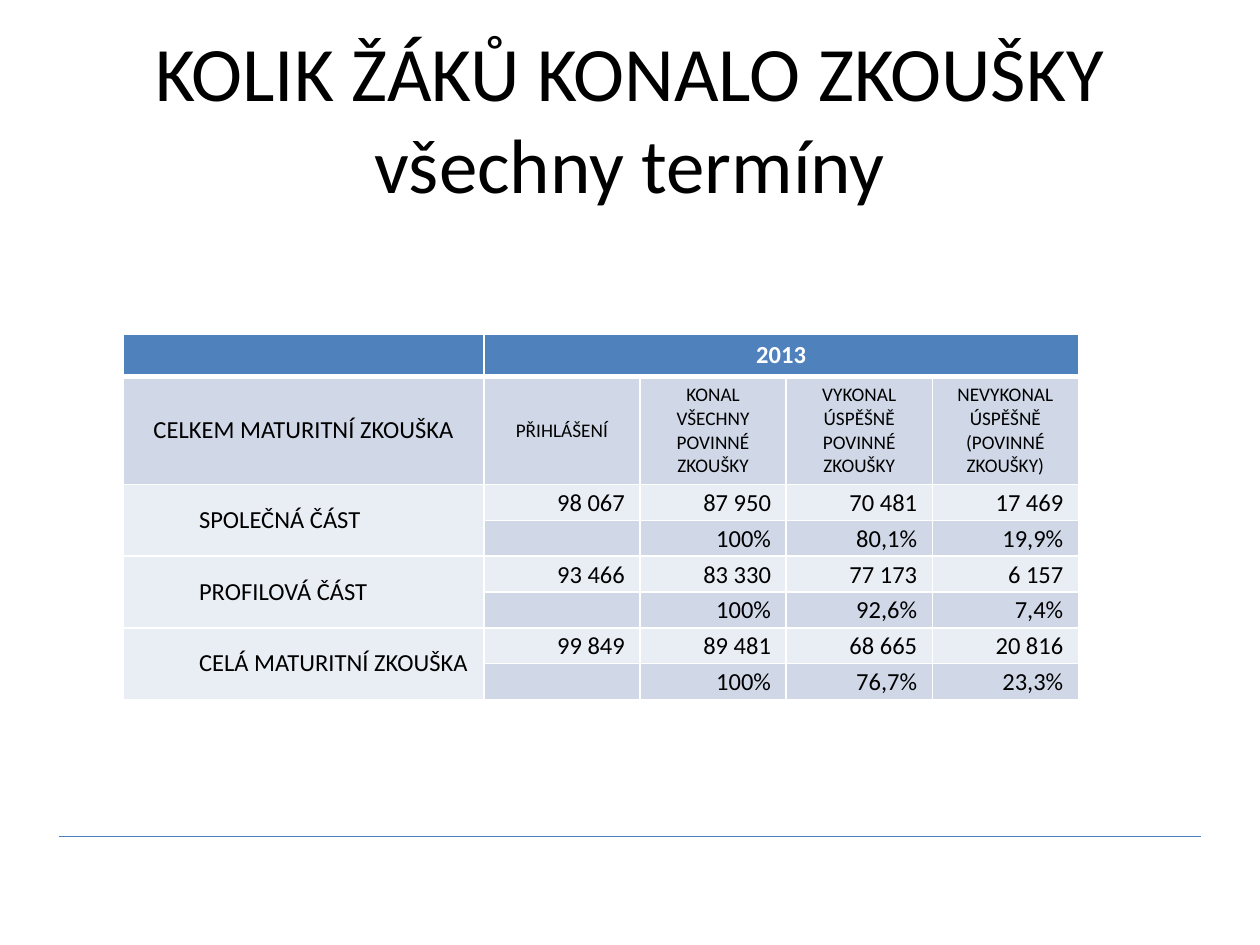
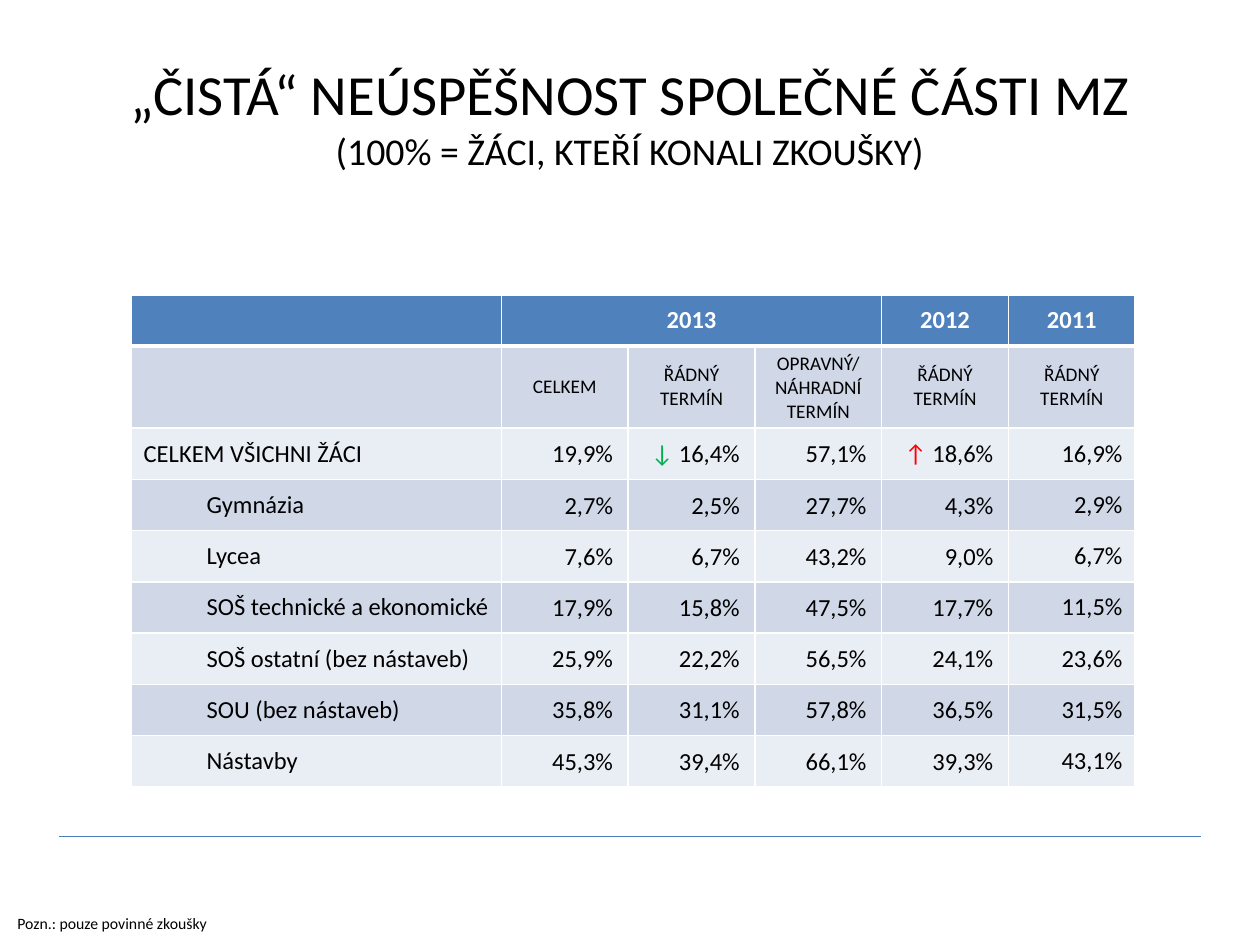
from dataclasses import dataclass

from lxml import etree
from pptx import Presentation
from pptx.dml.color import RGBColor
from pptx.enum.shapes import MSO_CONNECTOR
from pptx.enum.text import MSO_ANCHOR, MSO_AUTO_SIZE, PP_ALIGN
from pptx.oxml.ns import qn
from pptx.util import Inches, Pt

LEFT, CENTER, RIGHT = PP_ALIGN.LEFT, PP_ALIGN.CENTER, PP_ALIGN.RIGHT
MIDDLE = MSO_ANCHOR.MIDDLE
NO_AUTOFIT = MSO_AUTO_SIZE.NONE
STRAIGHT = MSO_CONNECTOR.STRAIGHT

FONT = "Calibri"
COLORS = {
    "text": "000000",
    "white": "FFFFFF",
    "rule": "4B7EBC",
    "header": "4F81BD",
    "dark band": "D0D8E8",
    "light band": "E9EDF4",
    "↓": "00B050",
    "↑": "FF0000",
}

# The slide is a grid of 100 columns by 75 rows of square cells
SLIDE_WIDTH, SLIDE_HEIGHT = Inches(10), Inches(7.5)
GRID_CELL = SLIDE_WIDTH // 100
TITLE_ONLY = 5
NUMBER_MARGINS = (0.1, 0.1, 1.2, 0)
LABEL_INDENT = 5


@dataclass
class Box:
    left: float
    top: float
    width: float
    height: float


@dataclass
class TitleLine:
    text: str
    size: float


@dataclass
class Row:
    label: str
    values: list[str]
    indented: bool = True


@dataclass
class ResultTable:
    left: float
    top: float
    column_widths: list[float]
    row_heights: list[float]
    rows: list[Row]
    merges: list[tuple[int, int, int, int]]
    narrow_margin_columns: int = 4


@dataclass
class CellStyle:
    size: float
    align: PP_ALIGN
    color: str = "text"
    bold: bool = False
    indent: float = 0


def grid(cells: float) -> int:
    return round(cells * GRID_CELL)


def rgb(name: str) -> RGBColor:
    return RGBColor.from_string(COLORS[name])


def set_font(font, size: float, color: str = "text", bold: bool = False) -> None:
    font.name, font.size, font.bold = FONT, Pt(size), bold
    font.color.rgb = rgb(color)


def place(shape, box: Box) -> None:
    shape.left, shape.top = grid(box.left), grid(box.top)
    shape.width, shape.height = grid(box.width), grid(box.height)


# Shared parts: title and bottom rule
def add_titled_slide(presentation, box: Box, lines: list[TitleLine]):
    slide = presentation.slides.add_slide(presentation.slide_layouts[TITLE_ONLY])
    title = slide.shapes.title
    place(title, box)
    frame = title.text_frame
    frame.auto_size, frame.vertical_anchor = NO_AUTOFIT, MIDDLE
    paragraph = frame.paragraphs[0]
    paragraph.alignment = CENTER
    set_font(paragraph.font, lines[0].size)
    for index, line in enumerate(lines):
        if index:
            paragraph.add_line_break()
        run = paragraph.add_run()
        run.text = line.text
        run.font.size = Pt(line.size)

    rule = slide.shapes.add_connector(
        STRAIGHT, grid(4.7), grid(66.4), grid(95.3), grid(66.4))
    rule.line.color.rgb, rule.line.width = rgb("rule"), Pt(0.75)
    etree.SubElement(rule._element.spPr, qn("a:effectLst"))
    return slide


# Table cells
def set_borders(cell, row: int) -> None:
    properties = cell._tc.get_or_add_tcPr()
    thick_sides = {0: "B", 1: "T"}
    for side in "LRTB":
        width = Pt(3 if thick_sides.get(row) == side else 1)
        line = etree.SubElement(properties, qn(f"a:ln{side}"), w=str(width))
        fill = etree.SubElement(line, qn("a:solidFill"))
        etree.SubElement(fill, qn("a:srgbClr"), val=COLORS["white"])


def write_cell(cell, text: str, style: CellStyle) -> None:
    cell.vertical_anchor = MIDDLE
    frame = cell.text_frame
    for index, part in enumerate(text.split("\n")):
        paragraph = frame.add_paragraph() if index else frame.paragraphs[0]
        paragraph.alignment = style.align
        set_font(paragraph.font, style.size, style.color, style.bold)
        if style.indent:
            paragraph._p.get_or_add_pPr().set("marL", str(grid(style.indent)))
        if not part:
            # An empty cell must not force its row taller
            paragraph._p.get_or_add_endParaRPr().set("sz", str(style.size * 100))
        elif part[0] in COLORS:
            for piece, color in ((part[:2], part[0]), (part[2:], "text")):
                run = paragraph.add_run()
                run.text = piece
                run.font.color.rgb = rgb(color)
        else:
            paragraph.add_run().text = part


def cell_style(row: int, column: int, indented: bool) -> CellStyle:
    if row == 0:
        return CellStyle(14, CENTER, "white", True)
    if row == 1:
        return CellStyle(11 if column else 14, CENTER)
    if column:
        return CellStyle(14, RIGHT)
    return CellStyle(14, LEFT, indent=LABEL_INDENT if indented else 0)


def add_result_table(slide, spec: ResultTable) -> None:
    table = slide.shapes.add_table(
        len(spec.rows), len(spec.column_widths), grid(spec.left), grid(spec.top),
        grid(sum(spec.column_widths)), grid(sum(spec.row_heights))).table
    for column, width in zip(table.columns, spec.column_widths):
        column.width = grid(width)
    for row, height in zip(table.rows, spec.row_heights):
        row.height = grid(height)

    for row_index, row in enumerate(spec.rows):
        band = "dark band" if row_index % 2 else "light band"
        for column_index, text in enumerate([row.label, *row.values]):
            cell = table.cell(row_index, column_index)
            set_borders(cell, row_index)
            cell.fill.solid()
            cell.fill.fore_color.rgb = rgb(band if row_index else "header")
            if row_index > 1 and 1 <= column_index <= spec.narrow_margin_columns:
                (cell.margin_left, cell.margin_top, cell.margin_right,
                 cell.margin_bottom) = map(grid, NUMBER_MARGINS)
            write_cell(cell, text, cell_style(row_index, column_index, row.indented))

    for top, left, bottom, right in spec.merges:
        table.cell(top, left).merge(table.cell(bottom, right))


def add_note(slide, text: str, box: Box) -> None:
    note = slide.shapes.add_textbox(0, 0, 0, 0)
    place(note, box)
    note.text_frame.word_wrap = True
    paragraph = note.text_frame.paragraphs[0]
    paragraph.text = text
    set_font(paragraph.font, 9)


# Slide contents
EXAM_COUNTS = ResultTable(
    9.8, 26.5, [28.6, 12.4] + [11.6] * 3, [3.3, 8.6] + [2.84] * 6,
    [
        Row("", ["2013", "", "", ""]),
        Row("CELKEM MATURITNÍ ZKOUŠKA", [
            "PŘIHLÁŠENÍ", "KONAL VŠECHNY POVINNÉ ZKOUŠKY",
            "VYKONAL ÚSPĚŠNĚ\nPOVINNÉ ZKOUŠKY",
            "NEVYKONAL ÚSPĚŠNĚ\n(POVINNÉ ZKOUŠKY)"]),
        Row("SPOLEČNÁ ČÁST", ["98 067", "87 950", "70 481", "17 469"]),
        Row("", ["", "100%", "80,1%", "19,9%"]),
        Row("PROFILOVÁ ČÁST", ["93 466", "83 330", "77 173", "6 157"]),
        Row("", ["", "100%", "92,6%", "7,4%"]),
        Row("CELÁ MATURITNÍ ZKOUŠKA", ["99 849", "89 481", "68 665", "20 816"]),
        Row("", ["", "100%", "76,7%", "23,3%"]),
    ],
    [(0, 1, 0, 4)] + [(top, 0, top + 1, 0) for top in (2, 4, 6)],
)

FAILURE_RATES = ResultTable(
    10.4, 23.4, [29.4] + [10.06] * 5, [4.07, 6.4] + [4.07] * 7,
    [
        Row("", ["2013", "", "", "2012", "2011"]),
        Row("", ["CELKEM", "ŘÁDNÝ TERMÍN", "OPRAVNÝ/ NÁHRADNÍ TERMÍN",
                 "ŘÁDNÝ TERMÍN", "ŘÁDNÝ TERMÍN"]),
        Row("CELKEM VŠICHNI ŽÁCI",
            ["19,9%", "↓ 16,4%", "57,1%", "↑ 18,6%", "16,9%"], indented=False),
        Row("Gymnázia", ["2,7%", "2,5%", "27,7%", "4,3%", "2,9%"]),
        Row("Lycea", ["7,6%", "6,7%", "43,2%", "9,0%", "6,7%"]),
        Row("SOŠ technické a ekonomické",
            ["17,9%", "15,8%", "47,5%", "17,7%", "11,5%"]),
        Row("SOŠ ostatní (bez nástaveb)",
            ["25,9%", "22,2%", "56,5%", "24,1%", "23,6%"]),
        Row("SOU (bez nástaveb)", ["35,8%", "31,1%", "57,8%", "36,5%", "31,5%"]),
        Row("Nástavby", ["45,3%", "39,4%", "66,1%", "39,3%", "43,1%"]),
    ],
    [(0, 1, 0, 3)],
)


def main() -> None:
    presentation = Presentation()
    presentation.slide_width, presentation.slide_height = SLIDE_WIDTH, SLIDE_HEIGHT

    counts_slide = add_titled_slide(presentation, Box(5, 4.6, 90, 9.3), [
        TitleLine("KOLIK ŽÁKŮ KONALO ZKOUŠKY", 44), TitleLine("všechny termíny", 44)])
    add_result_table(counts_slide, EXAM_COUNTS)

    rates_slide = add_titled_slide(presentation, Box(5, 3, 90, 12.4), [
        TitleLine("„ČISTÁ“ NEÚSPĚŠNOST SPOLEČNÉ ČÁSTI MZ", 32.4),
        TitleLine("(100% = ŽÁCI, KTEŘÍ KONALI ZKOUŠKY)", 21.6)])
    add_note(rates_slide, "Pozn.: pouze povinné zkoušky", Box(0.4, 72, 99.6, 2.5))
    add_result_table(rates_slide, FAILURE_RATES)

    presentation.save("out.pptx")


if __name__ == "__main__":
    main()
